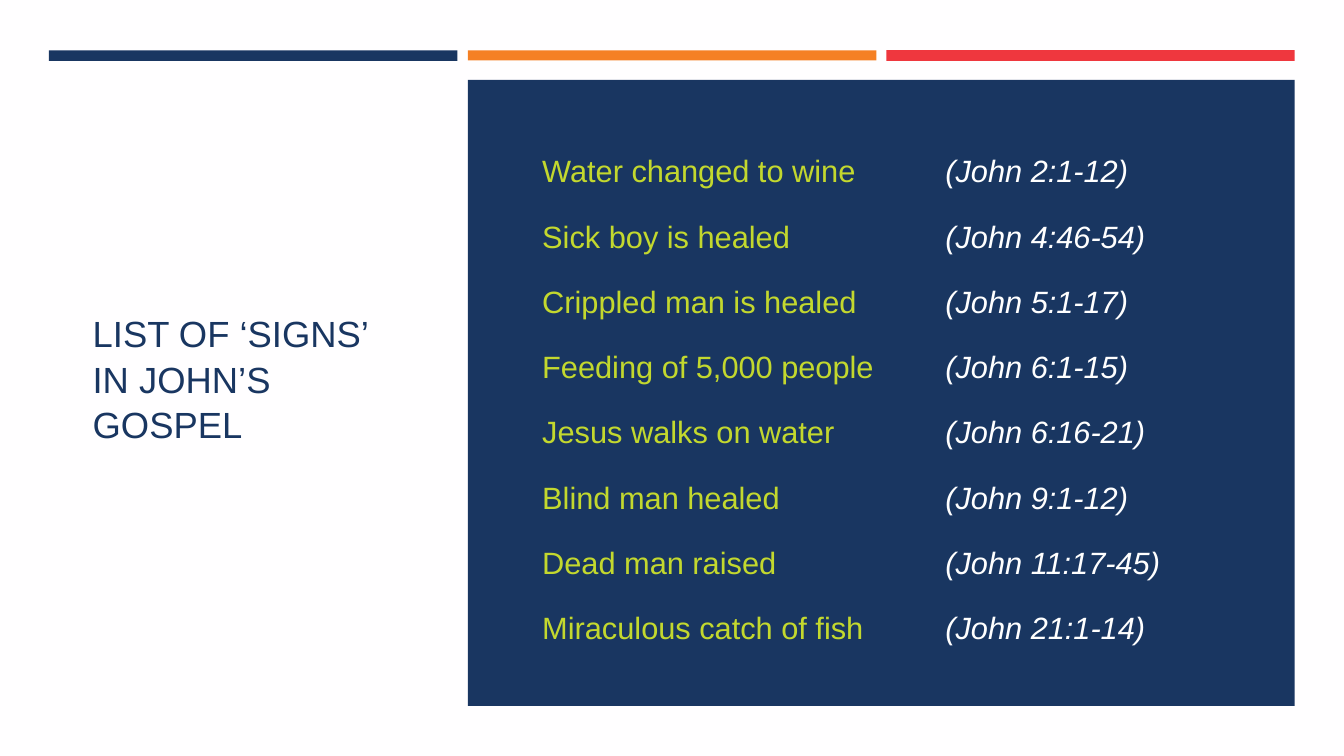
"""Builds a slide that lists the signs in John's Gospel."""
from dataclasses import dataclass

from lxml.etree import SubElement
from pptx import Presentation
from pptx.dml.color import RGBColor
from pptx.dml.fill import FillFormat
from pptx.enum.shapes import MSO_SHAPE as Preset
from pptx.enum.text import MSO_ANCHOR as Anchor, MSO_AUTO_SIZE as AutoSize, PP_ALIGN as Align
from pptx.oxml.ns import qn
from pptx.slide import Slide
from pptx.text.text import Font
from pptx.util import Pt

NAVY, ORANGE, RED = "193661", "F58024", "EF373E"
LIME, WHITE, PAPER = "C3D82E", "FFFFFF", "FFFEFF"
ROW_LEFT, ROW_TOP, ROW_WIDTH, ROW_HEIGHT = 380.2, 105.1, 514, 33.8
ROW_PITCH = 46.6
VERSE_TAB = 288


@dataclass(frozen=True)
class Block:
    left: float
    top: float
    width: float
    height: float
    color: str


@dataclass(frozen=True)
class Sign:
    event: str
    verses: str


BLOCKS = [
    Block(35, 36, 291.8, 7.5, NAVY),
    Block(334.2, 36, 291.8, 7.2, ORANGE),
    Block(633.2, 35.8, 291.6, 7.8, RED),
    Block(334.2, 57, 590.6, 447.2, NAVY),
]
SIGNS = [
    Sign("Water changed to wine", "(John 2:1-12)"),
    Sign("Sick boy is healed", "(John 4:46-54)"),
    Sign("Crippled man is healed", "(John 5:1-17)"),
    Sign("Feeding of 5,000 people", "(John 6:1-15)"),
    Sign("Jesus walks on water", "(John 6:16-21)"),
    Sign("Blind man healed", "(John 9:1-12)"),
    Sign("Dead man raised", "(John 11:17-45)"),
    Sign("Miraculous catch of fish", "(John 21:1-14)"),
]


def paint(fill: FillFormat, color: str) -> None:
    fill.solid()
    fill.fore_color.rgb = RGBColor.from_string(color)


def set_font(font: Font, size: float) -> None:
    font.name = "Arial"
    font.size = Pt(size)


def add_title(page: Slide) -> None:
    title = page.shapes.title
    title.left, title.top, title.width, title.height = Pt(59), Pt(84.2), Pt(240.5), Pt(370.8)
    frame = title.text_frame
    frame.text = "LIST OF ‘SIGNS’ IN JOHN’S GOSPEL"
    frame.word_wrap = True
    frame.auto_size = AutoSize.NONE
    frame.vertical_anchor = Anchor.MIDDLE
    para = frame.paragraphs[0]
    para.alignment = Align.LEFT
    para.line_spacing = 1.05
    set_font(para.font, 26)
    paint(para.font.fill, NAVY)


def add_block(page: Slide, block: Block) -> None:
    shape = page.shapes.add_shape(
        Preset.RECTANGLE, Pt(block.left), Pt(block.top), Pt(block.width), Pt(block.height))
    shape.shadow.inherit = False
    paint(shape.fill, block.color)
    shape.line.fill.background()


def add_sign(page: Slide, sign: Sign, top: float) -> None:
    box = page.shapes.add_textbox(Pt(ROW_LEFT), Pt(top), Pt(ROW_WIDTH), Pt(ROW_HEIGHT))
    frame = box.text_frame
    frame.word_wrap = True
    frame.auto_size = AutoSize.SHAPE_TO_FIT_TEXT
    para = frame.paragraphs[0]
    tabs = SubElement(para._p.get_or_add_pPr(), qn("a:tabLst"))
    SubElement(tabs, qn("a:tab"), pos=str(Pt(VERSE_TAB)), algn="l")
    set_font(para.font, 22)
    for text, color in ((f"{sign.event}\t", LIME), (sign.verses, WHITE)):
        span = para.add_run()
        span.text = text
        paint(span.font.fill, color)
    span.font.italic = True


def main() -> None:
    deck = Presentation()
    deck.slide_width, deck.slide_height = Pt(960), Pt(540)
    page = deck.slides.add_slide(deck.slide_layouts[5])
    paint(page.background.fill, PAPER)
    add_title(page)
    for block in BLOCKS:
        add_block(page, block)
    for row, sign in enumerate(SIGNS):
        add_sign(page, sign, ROW_TOP + row * ROW_PITCH)
    deck.save("out.pptx")


if __name__ == "__main__":
    main()
